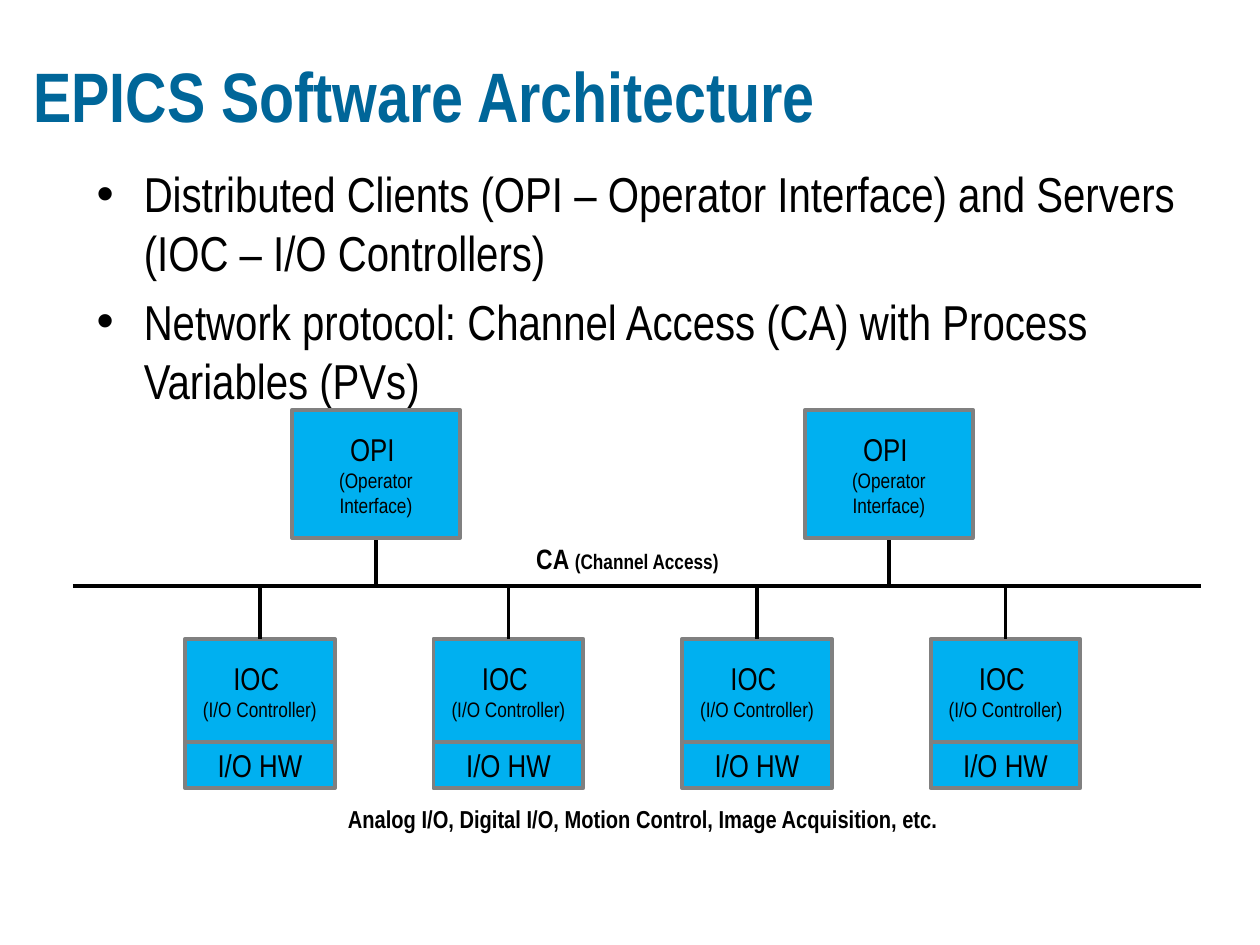
from lxml.etree import SubElement
from pptx import Presentation
from pptx.dml.color import RGBColor
from pptx.enum.shapes import MSO_CONNECTOR, MSO_SHAPE
from pptx.enum.text import MSO_ANCHOR, PP_ALIGN
from pptx.oxml.ns import qn
from pptx.util import Cm, Pt

TITLE_BLUE = RGBColor(0x00, 0x66, 0x99)
BOX_BLUE = RGBColor(0x00, 0xB0, 0xF0)
BORDER_GRAY = RGBColor(0x80, 0x80, 0x80)
BLACK = RGBColor(0x00, 0x00, 0x00)


class ArchitectureSlide:
    """Holds the slide and its style, and draws each kind of element."""

    font_name = "Arial Narrow"
    line_width = Pt(2.25)

    def __init__(self, presentation):
        self.slide = presentation.slides.add_slide(presentation.slide_layouts[5])

    def add_run(self, paragraph, text, size, color=BLACK, bold=False):
        run = paragraph.add_run()
        run.text = text
        run.font.name = self.font_name
        run.font.size = Pt(size)
        run.font.bold = bold
        run.font.color.rgb = color

    def fill_text(self, frame, paragraphs, alignment=PP_ALIGN.CENTER, bold=False):
        for index, runs in enumerate(paragraphs):
            paragraph = frame.paragraphs[0] if index == 0 else frame.add_paragraph()
            paragraph.alignment = alignment
            for text, size in runs:
                self.add_run(paragraph, text, size, bold=bold)

    def title(self, text, left, top, width, height):
        title = self.slide.shapes.title
        title.left, title.top = Cm(left), Cm(top)
        title.width, title.height = Cm(width), Cm(height)
        title.text_frame.vertical_anchor = MSO_ANCHOR.MIDDLE
        paragraph = title.text_frame.paragraphs[0]
        paragraph.alignment = PP_ALIGN.LEFT
        self.add_run(paragraph, text, 40, TITLE_BLUE, True)

    def text_box(self, left, top, width, height):
        box = self.slide.shapes.add_textbox(Cm(left), Cm(top), Cm(width), Cm(height))
        box.text_frame.word_wrap = True
        return box.text_frame

    def bullets(self, texts, left, top, width, height):
        frame = self.text_box(left, top, width, height)
        self.fill_text(frame, [[(text, 28)] for text in texts], PP_ALIGN.LEFT)
        for index, paragraph in enumerate(frame.paragraphs):
            if index > 0:
                paragraph.space_before = Pt(5.6)
            properties = paragraph._p.get_or_add_pPr()
            properties.set("marL", str(Cm(0.95)))
            properties.set("indent", str(Cm(-0.95)))
            SubElement(properties, qn("a:buFont"), typeface="Arial")
            SubElement(properties, qn("a:buChar"), char="•")

    def label(self, runs, left, top, width, height):
        frame = self.text_box(left, top, width, height)
        self.fill_text(frame, [runs], bold=True)

    def box(self, paragraphs, left, top, width, height):
        shape = self.slide.shapes.add_shape(
            MSO_SHAPE.RECTANGLE, Cm(left), Cm(top), Cm(width), Cm(height))
        shape.shadow.inherit = False
        shape.fill.solid()
        shape.fill.fore_color.rgb = BOX_BLUE
        shape.line.color.rgb = BORDER_GRAY
        shape.line.width = self.line_width
        shape.text_frame.word_wrap = False
        shape.text_frame.vertical_anchor = MSO_ANCHOR.MIDDLE
        self.fill_text(shape.text_frame, paragraphs)

    def line(self, start_x, start_y, end_x, end_y):
        connector = self.slide.shapes.add_connector(
            MSO_CONNECTOR.STRAIGHT, Cm(start_x), Cm(start_y), Cm(end_x), Cm(end_y))
        connector.line.color.rgb = BLACK
        connector.line.width = self.line_width
        SubElement(connector._element.spPr, qn("a:effectLst"))


def main():
    presentation = Presentation()
    presentation.slide_width, presentation.slide_height = Cm(25.4), Cm(19.05)
    slide = ArchitectureSlide(presentation)

    slide.title("EPICS Software Architecture", 0.42, 1.06, 24.55, 1.7)
    slide.bullets([
        "Distributed Clients (OPI – Operator Interface) and Servers (IOC – I/O Controllers)",
        "Network protocol: Channel Access (CA) with Process Variables (PVs)",
    ], 1.7, 3.18, 23.7, 5.08)

    bus_y = 11.81
    slide.line(1.47, bus_y, 24.21, bus_y)
    slide.label([("CA ", 16), ("(Channel Access)", 12)], 10.4, 10.8, 4.5, 0.94)

    opi_width, opi_top, opi_height = 3.38, 8.26, 2.59
    opi_text = [[("OPI ", 18)], [("(Operator", 12)], [("Interface)", 12)]]
    for left in (5.89, 16.23):
        center = left + opi_width / 2
        slide.line(center, opi_top + opi_height, center, bus_y)
        slide.box(opi_text, left, opi_top, opi_width, opi_height)

    ioc_width, ioc_top, ioc_height, hardware_height = 3.02, 12.88, 2.07, 0.94
    ioc_text = [[("IOC ", 18)], [("(I/O Controller)", 12)]]
    for column in range(4):
        left = 3.73 + column * 5.01
        center = left + ioc_width / 2
        slide.box(ioc_text, left, ioc_top, ioc_width, ioc_height)
        slide.box([[("I/O HW", 18)]], left, ioc_top + ioc_height, ioc_width, hardware_height)
        slide.line(center, ioc_top, center, bus_y)

    slide.label([("Analog I/O, Digital I/O, Motion Control, Image Acquisition, etc.", 14)],
                6.02, 16.08, 13.89, 0.86)

    presentation.save("out.pptx")


if __name__ == "__main__":
    main()
